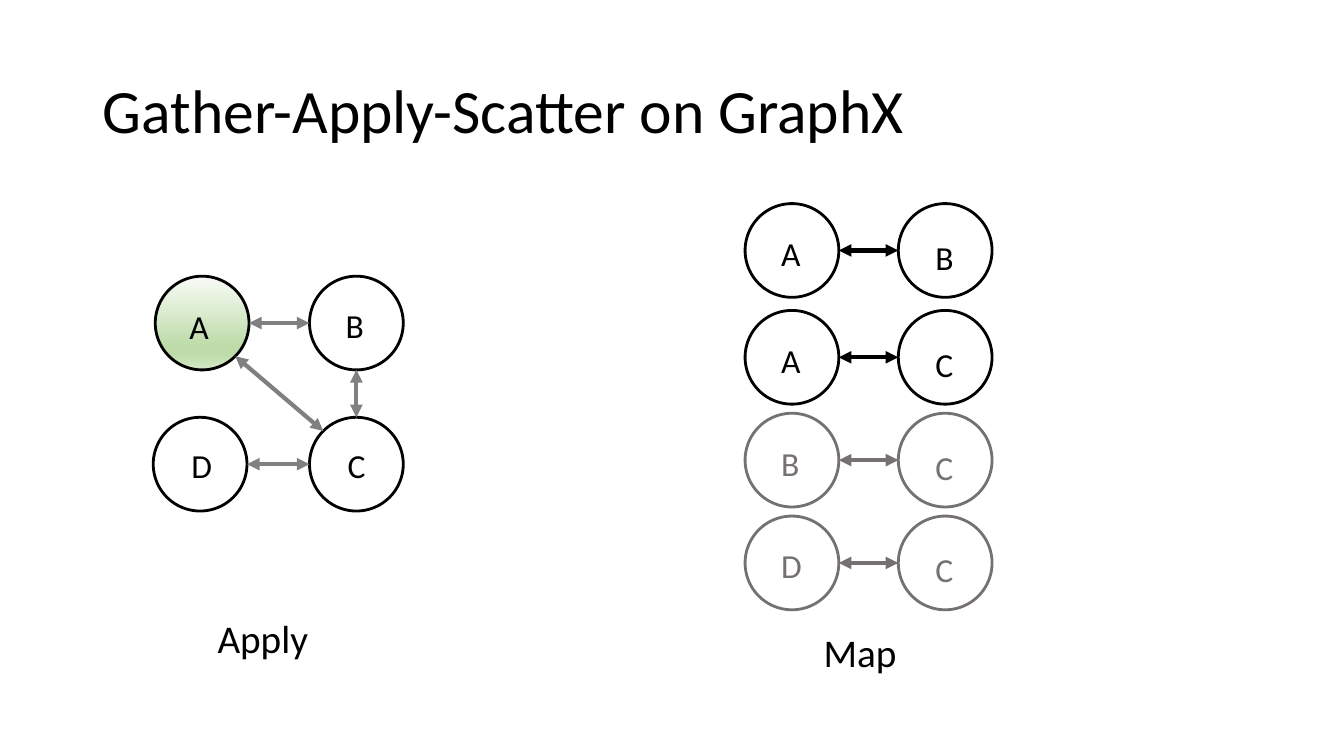
from math import cos, radians, sin

from lxml import etree
from pptx import Presentation
from pptx import util as u
from pptx.dml.color import RGBColor
from pptx.enum import shapes, text
from pptx.oxml.ns import qn

FONT = "Calibri"
BLACK, DIM, ARROW = "000000", "767171", "808080"
GREEN = [(0, "F8FBF6"), (74, "BEDCAA"), (83, "BEDCAA"), (100, "D4E8C6")]
DIAMETER = 0.93


def rgb(color):
    return RGBColor.from_string(color)


def add_text(s, content, x, y, w, h, size=24, color=BLACK, wrap=False, grow=True,
             anchor=text.MSO_ANCHOR.TOP, spacing=1.0):
    tf = s.shapes.add_textbox(u.Inches(x), u.Inches(y), u.Inches(w), u.Inches(h)).text_frame
    tf.word_wrap = wrap
    tf.auto_size = text.MSO_AUTO_SIZE.SHAPE_TO_FIT_TEXT if grow else text.MSO_AUTO_SIZE.NONE
    tf.vertical_anchor = anchor
    p = tf.paragraphs[0]
    p.line_spacing = spacing
    r = p.add_run()
    r.text = content
    r.font.name, r.font.size = FONT, u.Pt(size)
    r.font.color.rgb = rgb(color)


def fill_gradient(sp, stops):
    sp.fill.gradient()
    sp.fill.gradient_angle = 270
    gs_lst = sp._element.spPr.find(qn("a:gradFill")).find(qn("a:gsLst"))
    for gs in list(gs_lst):
        gs_lst.remove(gs)
    for pos, color in stops:
        gs = etree.SubElement(gs_lst, qn("a:gs"), pos=str(pos * 1000))
        etree.SubElement(gs, qn("a:srgbClr"), val=color)


def add_node(s, name, x, y, dx, dy, color=BLACK, stops=None):
    sp = s.shapes.add_shape(shapes.MSO_SHAPE.OVAL, u.Inches(x), u.Inches(y),
                            u.Inches(DIAMETER), u.Inches(DIAMETER))
    sp.shadow.inherit = False
    if stops:
        fill_gradient(sp, stops)
    else:
        sp.fill.background()
    sp.line.color.rgb = rgb(color)
    sp.line.width = u.Pt(2)
    add_text(s, name, x + dx, y + dy, 0.41, 0.5, color=color)
    return x, y


def rim(node, angle):
    radius = DIAMETER / 2
    return (node[0] + radius + radius * cos(radians(angle)),
            node[1] + radius + radius * sin(radians(angle)))


def add_edge(s, start, end, angle=0, color=ARROW):
    points = rim(start, angle) + rim(end, angle + 180)
    c = s.shapes.add_connector(shapes.MSO_CONNECTOR.STRAIGHT, *map(u.Inches, points))
    c.line.color.rgb = rgb(color)
    c.line.width = u.Pt(3)
    ln = c.line._get_or_add_ln()
    for end_tag in ("a:headEnd", "a:tailEnd"):
        etree.SubElement(ln, qn(end_tag), type="triangle")
    etree.SubElement(c._element.spPr, qn("a:effectLst"))


def add_title(s, x, y, w, h):
    add_text(s, "Gather-Apply-Scatter on GraphX", x, y, w, h, size=44, wrap=True,
             grow=False, anchor=text.MSO_ANCHOR.MIDDLE, spacing=0.9)


def add_map(s, x, y):
    rows = [("A", "B", 0, BLACK), ("A", "C", 1.06, BLACK),
            ("B", "C", 2.08, DIM), ("D", "C", 3.1, DIM)]
    for left, right, dy, color in rows:
        source = add_node(s, left, x, y + dy, 0.26, 0.24, color)
        target = add_node(s, right, x + 1.52, y + dy, 0.27, 0.28, color)
        add_edge(s, source, target, color=color)
    add_text(s, "Map", x + 0.68, y + 4.16, 1.86, 0.57, size=28, wrap=True)


def add_apply(s, x, y):
    a = add_node(s, "A", x + 0.02, y, 0.24, 0.25, stops=GREEN)
    b = add_node(s, "B", x + 1.55, y, 0.26, 0.24)
    d = add_node(s, "D", x, y + 1.4, 0.28, 0.22)
    c = add_node(s, "C", x + 1.55, y + 1.4, 0.28, 0.22)
    for start, end, angle in [(a, b, 0), (a, c, 45), (b, c, 90), (d, c, 0)]:
        add_edge(s, start, end, angle)
    add_text(s, "Apply", x + 0.54, y + 3.31, 1.7, 0.57, size=28, wrap=True)


def main():
    prs = Presentation()
    prs.slide_width, prs.slide_height = u.Inches(13.33), u.Inches(7.5)
    s = prs.slides.add_slide(prs.slide_layouts[6])
    add_title(s, 0.92, 0.4, 11.5, 1.45)
    add_map(s, 7.39, 2.02)
    add_apply(s, 1.52, 2.74)
    prs.save("out.pptx")


if __name__ == "__main__":
    main()
